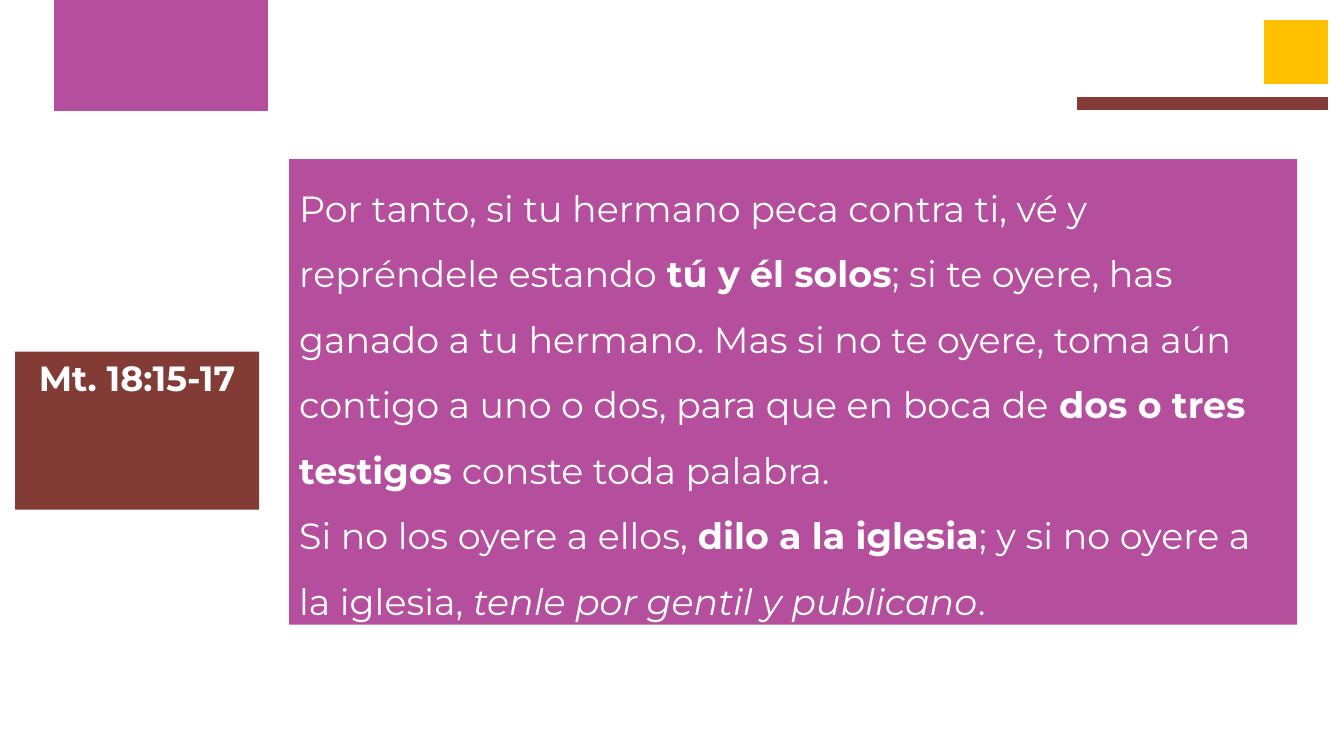
from dataclasses import dataclass

from pptx import Presentation
from pptx.dml.color import RGBColor
from pptx.enum import shapes, text
from pptx.util import Cm, Pt


@dataclass(frozen=True)
class Theme:
    font: str = "Montserrat"
    purple: RGBColor = RGBColor(0xB5, 0x4E, 0x9D)
    brown: RGBColor = RGBColor(0x82, 0x3B, 0x35)
    yellow: RGBColor = RGBColor(0xFF, 0xC0, 0x00)
    white: RGBColor = RGBColor(0xFF, 0xFF, 0xFF)
    reference_size: Pt = Pt(25)
    verse_size: Pt = Pt(26)
    outline: Pt = Pt(1)


@dataclass(frozen=True)
class Box:
    left: float
    top: float
    width: float
    height: float

    def lengths(self) -> tuple:
        return Cm(self.left), Cm(self.top), Cm(self.width), Cm(self.height)


@dataclass(frozen=True)
class Ornament:
    box: Box
    fill: RGBColor
    line: RGBColor


@dataclass(frozen=True)
class Phrase:
    text: str
    bold: bool = False
    italic: bool = False


THEME = Theme()
REFERENCE_BOX = Box(0.38, 8.86, 6.15, 1.32)
VERSE_BOX = Box(7.29, 4.01, 25.4, 11.73)
ORNAMENTS = [
    Ornament(Box(1.37, 0, 5.36, 2.79), THEME.purple, THEME.purple),
    Ornament(Box(31.88, 0.53, 1.57, 1.57), THEME.yellow, THEME.yellow),
    Ornament(Box(27.13, 2.44, 6.35, 0.36), THEME.brown, THEME.white),
]
VERSES = [
    [
        Phrase("Por tanto, si tu hermano peca contra ti, vé y repréndele estando "),
        Phrase("tú y él solos", bold=True),
        Phrase("; si te oyere, has ganado a tu hermano. Mas si no te oyere, "
               "toma aún contigo a uno o dos, para que en boca de "),
        Phrase("dos o tres testigos", bold=True),
        Phrase(" conste toda palabra."),
    ],
    [
        Phrase("Si no los oyere a ellos, "),
        Phrase("dilo a la iglesia", bold=True),
        Phrase("; y si no oyere a la iglesia, "),
        Phrase("tenle por gentil y publicano", italic=True),
        Phrase("."),
    ],
]


def paint(shape, color: RGBColor) -> None:
    shape.fill.solid()
    shape.fill.fore_color.rgb = color


def prepare_frame(frame) -> None:
    frame.word_wrap = True
    frame.vertical_anchor = text.MSO_ANCHOR.TOP
    frame.auto_size = text.MSO_AUTO_SIZE.SHAPE_TO_FIT_TEXT


def style_paragraph(paragraph, size: Pt) -> None:
    paragraph.font.name = THEME.font
    paragraph.font.size = size
    paragraph.font.color.rgb = THEME.white


def add_reference(slide) -> None:
    title = slide.shapes.title
    title.left, title.top, title.width, title.height = REFERENCE_BOX.lengths()
    paint(title, THEME.brown)
    title.text_frame.text = "Mt. 18:15-17"
    prepare_frame(title.text_frame)
    paragraph = title.text_frame.paragraphs[0]
    paragraph.alignment = text.PP_ALIGN.CENTER
    style_paragraph(paragraph, THEME.reference_size)
    paragraph.font.bold = True


def add_verses(slide) -> None:
    panel = slide.shapes.add_textbox(*VERSE_BOX.lengths())
    paint(panel, THEME.purple)
    frame = panel.text_frame
    prepare_frame(frame)
    for index, phrases in enumerate(VERSES):
        paragraph = frame.add_paragraph() if index else frame.paragraphs[0]
        paragraph.line_spacing = 1.5
        style_paragraph(paragraph, THEME.verse_size)
        for phrase in phrases:
            run = paragraph.add_run()
            run.text = phrase.text
            run.font.bold = phrase.bold
            run.font.italic = phrase.italic


def add_ornament(slide, ornament: Ornament) -> None:
    shape = slide.shapes.add_shape(shapes.MSO_SHAPE.RECTANGLE, *ornament.box.lengths())
    shape.shadow.inherit = False
    paint(shape, ornament.fill)
    shape.line.color.rgb = ornament.line
    shape.line.width = THEME.outline


def main() -> None:
    presentation = Presentation()
    presentation.slide_width, presentation.slide_height = Cm(33.87), Cm(19.05)
    title_only = presentation.slide_layouts.get_by_name("Title Only")
    slide = presentation.slides.add_slide(title_only)
    add_reference(slide)
    add_verses(slide)
    for ornament in ORNAMENTS:
        add_ornament(slide, ornament)
    presentation.save("out.pptx")


if __name__ == "__main__":
    main()
